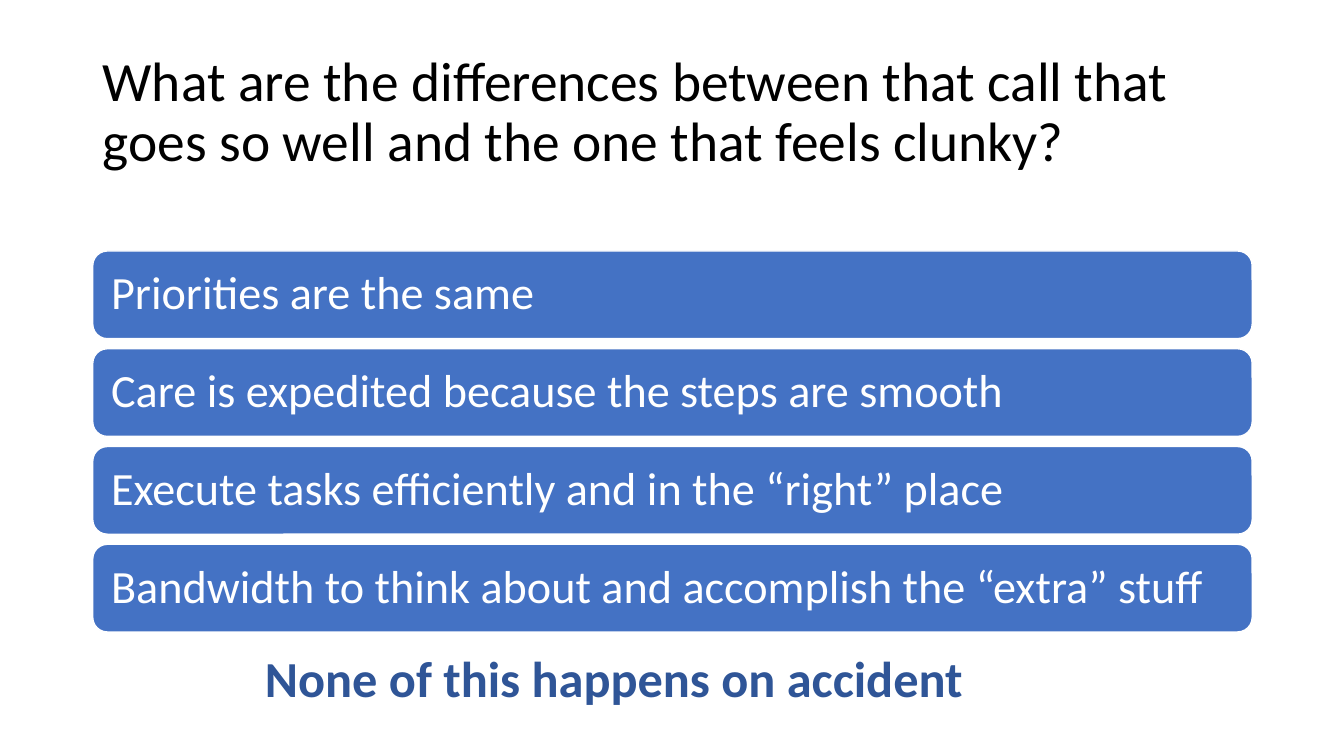
from dataclasses import dataclass

from pptx import Presentation
from pptx.dml.color import RGBColor
from pptx.enum.shapes import MSO_SHAPE
from pptx.enum.text import MSO_ANCHOR, PP_ALIGN
from pptx.util import Inches, Pt


@dataclass(frozen=True)
class Theme:
    face: str = "Calibri"
    black: str = "000000"
    white: str = "FFFFFF"
    blue: str = "4472C4"
    navy: str = "2F5597"
    title: float = 39.6
    bar: float = 33
    close: float = 36


theme = Theme()


def write(shape, text, size, color, bold=False, pitch=0.9, anchor=MSO_ANCHOR.MIDDLE):
    """Fill a shape with one left-aligned paragraph."""
    frame = shape.text_frame
    frame.word_wrap = True
    frame.vertical_anchor = anchor
    para = frame.paragraphs[0]
    para.text = text
    para.alignment = PP_ALIGN.LEFT
    para.line_spacing = pitch
    font = para.font
    font.name = theme.face
    font.size = Pt(size)
    font.bold = bold
    font.color.rgb = RGBColor.from_string(color)


deck = Presentation()
deck.slide_width = Inches(13.33)
deck.slide_height = Inches(7.5)
slide = deck.slides.add_slide(deck.slide_layouts[6])
shapes = slide.shapes

left, width = Inches(0.92), Inches(11.5)

title = shapes.add_textbox(left, Inches(0.4), width, Inches(1.45))
write(
    title,
    "What are the differences between that call that goes so well "
    "and the one that feels clunky?",
    theme.title,
    theme.black,
)

points = [
    "Priorities are the same",
    "Care is expedited because the steps are smooth",
    "Execute tasks efficiently and in the “right” place",
    "Bandwidth to think about and accomplish the “extra” stuff",
]
top, step, height = 2.49, 0.97, 0.87
for row, point in enumerate(points):
    bar = shapes.add_shape(
        MSO_SHAPE.ROUNDED_RECTANGLE,
        left, Inches(top + row * step), width, Inches(height),
    )
    bar.shadow.inherit = False
    bar.fill.solid()
    bar.fill.fore_color.rgb = RGBColor.from_string(theme.blue)
    bar.line.color.rgb = RGBColor.from_string(theme.white)
    bar.line.width = Pt(1)
    frame = bar.text_frame
    frame.margin_left = frame.margin_right = Inches(0.14)
    frame.margin_top = frame.margin_bottom = Inches(0.14)
    write(bar, point, theme.bar, theme.white)

close = shapes.add_textbox(Inches(2.53), Inches(6.37), Inches(7.7), Inches(0.71))
write(
    close,
    "None of this happens on accident",
    theme.close,
    theme.navy,
    bold=True,
    pitch=1.0,
    anchor=MSO_ANCHOR.TOP,
)

deck.save("out.pptx")
